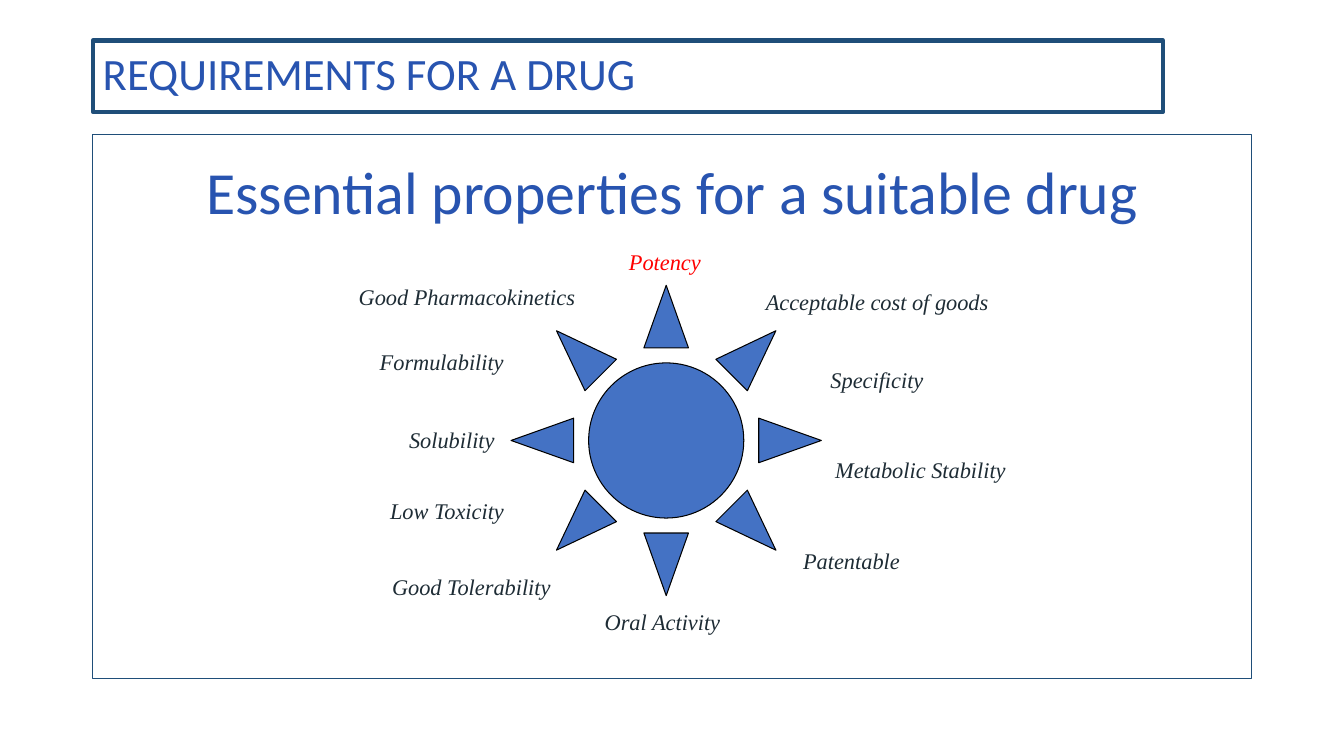
from pptx import Presentation, util as u
from pptx.dml.color import RGBColor
from pptx.enum import shapes, text

NAVY, BLUE, INK, RED = "1F4E79", "2854B0", "1E2C35", "FF0000"


def colour(value):
    return RGBColor.from_string(value)


class DrugSlide:
    heading_font = "Calibri"
    label_font = "Times New Roman"
    label_size = 16
    label_height = 0.94

    def __init__(self, deck):
        self.page = deck.slides.add_slide(deck.slide_layouts[6])

    def shape(self, kind, left, top, width, height, line, weight, fill=None):
        item = self.page.shapes.add_shape(
            kind, u.Cm(left), u.Cm(top), u.Cm(width), u.Cm(height))
        item.shadow.inherit = False
        if fill:
            item.fill.solid()
            item.fill.fore_color.rgb = colour(fill)
        else:
            item.fill.background()
        item.line.color.rgb = colour(line)
        item.line.width = u.Pt(weight)
        return item

    def wording(self, frame, words, font, size, ink, align, italic=False):
        para = frame.paragraphs[0]
        para.text = words
        para.alignment = align
        para.font.name = font
        para.font.size = u.Pt(size)
        para.font.italic = italic
        para.font.color.rgb = colour(ink)
        return para

    def panel(self, place, weight, words, size, align, anchor, spacing, inset):
        box = self.shape(shapes.MSO_SHAPE.RECTANGLE, *place, NAVY, weight)
        frame = box.text_frame
        frame.word_wrap = True
        frame.vertical_anchor = anchor
        frame.margin_top = u.Cm(inset)
        para = self.wording(frame, words, self.heading_font, size, BLUE, align)
        para.line_spacing = spacing

    def sun(self, left, top, size):
        self.shape(shapes.MSO_SHAPE.SUN, left, top, size, size,
                   "000000", 0.75, "4472C4")

    def label(self, words, left, top, width, ink=INK):
        box = self.page.shapes.add_textbox(
            u.Cm(left), u.Cm(top), u.Cm(width), u.Cm(self.label_height))
        frame = box.text_frame
        frame.word_wrap = False
        frame.auto_size = text.MSO_AUTO_SIZE.SHAPE_TO_FIT_TEXT
        self.wording(frame, words, self.label_font, self.label_size, ink,
                     text.PP_ALIGN.LEFT, True)


def main():
    deck = Presentation()
    deck.slide_width, deck.slide_height = u.Cm(33.87), u.Cm(19.05)
    slide = DrugSlide(deck)
    slide.panel((2.34, 1.02, 26.97, 1.8), 3, "REQUIREMENTS FOR A DRUG", 32,
                text.PP_ALIGN.LEFT, text.MSO_ANCHOR.MIDDLE, 0.9, 0.13)
    slide.panel((2.34, 3.38, 29.21, 13.72), 0.75,
                "Essential properties for a suitable drug", 42.7,
                text.PP_ALIGN.CENTER, text.MSO_ANCHOR.TOP, 1.1, 0.34)
    slide.sun(12.88, 7.19, 7.82)
    slide.label("Potency", 15.6, 6.12, 2.36, RED)
    for words, left, top, width in (
        ("Specificity", 20.68, 9.09, 2.9),
        ("Metabolic Stability", 20.8, 11.38, 4.88),
        ("Oral Activity", 14.99, 15.21, 3.48),
        ("Low Toxicity", 9.58, 12.4, 3.48),
        ("Good Tolerability", 9.63, 14.33, 4.62),
        ("Solubility", 10.06, 10.62, 2.72),
        ("Formulability", 9.32, 8.66, 3.68),
        ("Good Pharmacokinetics", 8.79, 7.01, 6.05),
        ("Acceptable cost of goods", 19.05, 7.14, 6.2),
        ("Patentable", 19.99, 13.67, 3),
    ):
        slide.label(words, left, top, width)
    deck.save("out.pptx")


if __name__ == "__main__":
    main()
